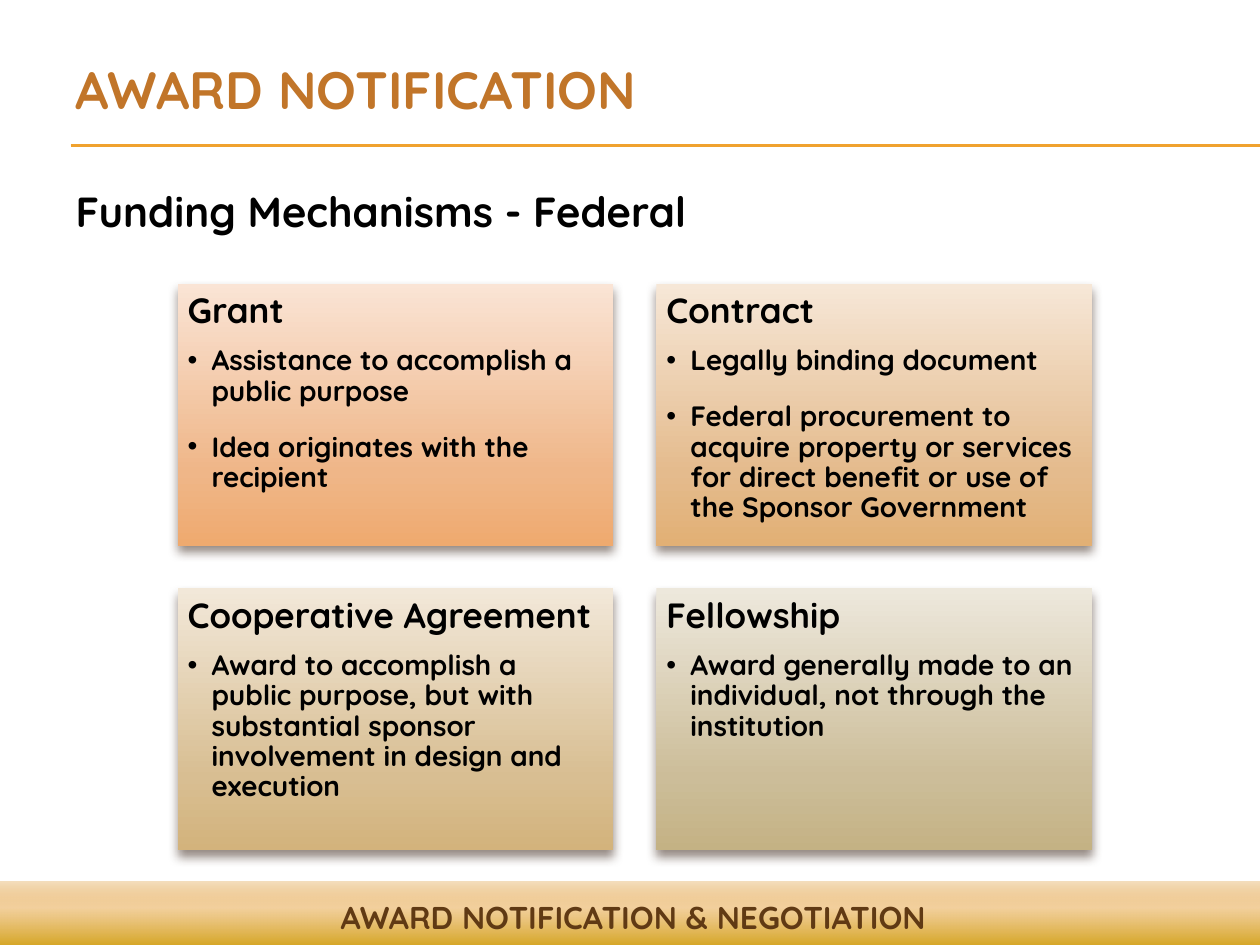
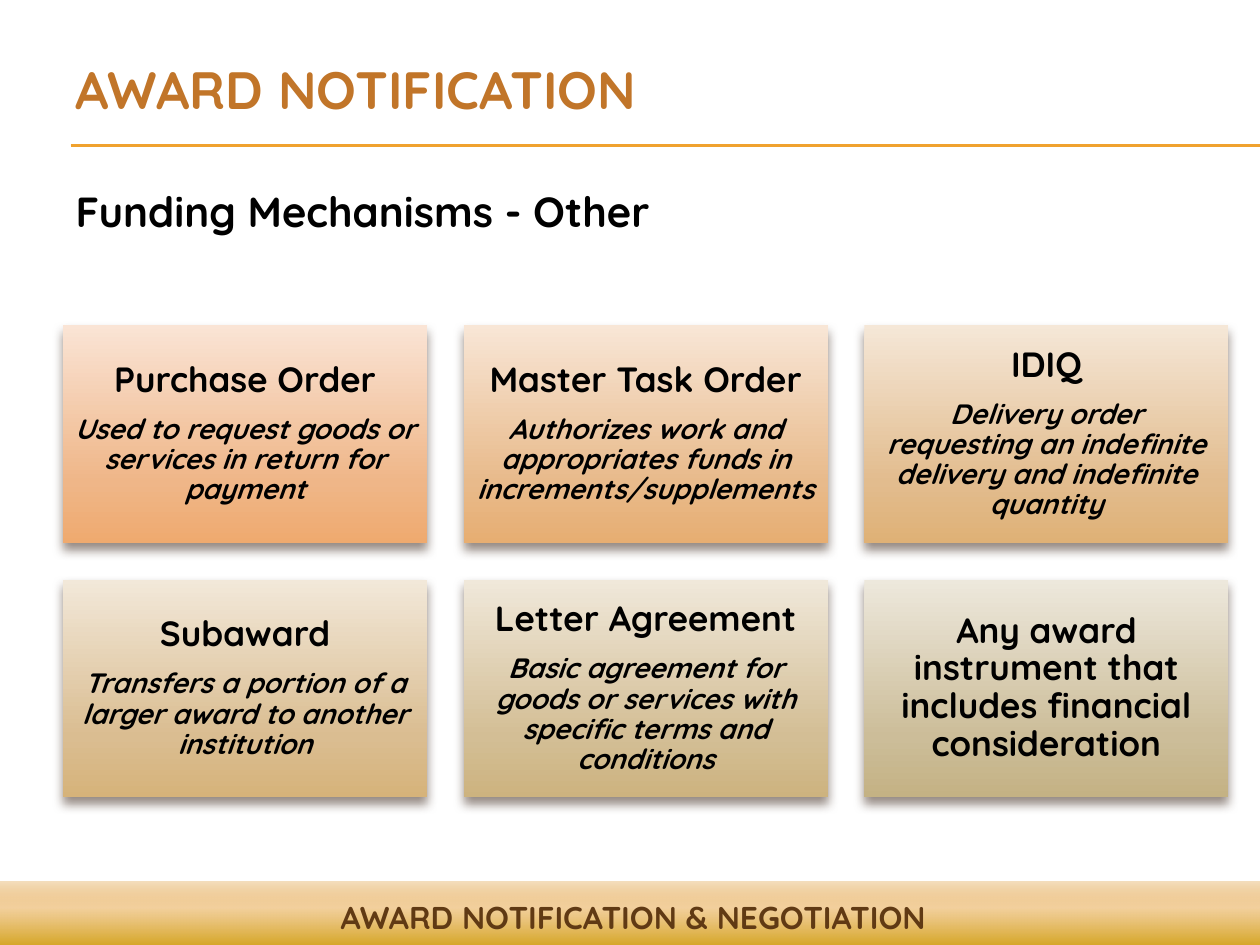
import pptx
import pptx.dml.color
import pptx.enum.shapes
import pptx.enum.text
import pptx.oxml.ns
import pptx.util
from lxml import etree

Inches = pptx.util.Inches
Pt = pptx.util.Pt
ALIGN = pptx.enum.text.PP_ALIGN
ANCHOR = pptx.enum.text.MSO_ANCHOR
AUTO_SIZE = pptx.enum.text.MSO_AUTO_SIZE
qn = pptx.oxml.ns.qn

COLORS = {
    "title": "C17529",
    "text": "000000",
    "footer": "603A14",
    "rule": "F0A22E",
    "shadow": "4E3B30",
    "band_bottom": "CC9900",
    "band_middle": "EFC17E",
    "band_top": "D68000",
}
CARD_TONES = {
    "peach": ("FAE4D5", "EFB688", "EFAA6F"),
    "apricot": ("F8E6D6", "E8BA8B", "E7AE72"),
    "amber": ("F6E7D7", "E4BB8D", "E2B075"),
    "honey": ("F5E7D7", "E2BC8E", "DFB176"),
    "wheat": ("F2E8D9", "D8BE92", "D3B37C"),
    "straw": ("F2E8D9", "DABD91", "D6B37A"),
    "sand": ("F0E8DA", "D3BE95", "CDB37F"),
    "olive": ("EDE8DC", "CCBD99", "C4B284"),
}
FONTS = {
    "title": {"size": Pt(30), "bold": True},
    "subtitle": {"size": Pt(24), "bold": True},
    "footer": {"size": Pt(18), "bold": True},
    "heading": {"size": Pt(20), "bold": True},
    "bullet": {"size": Pt(16), "bold": True},
    "summary": {"size": Pt(16), "bold": True, "italic": True},
}
HEADING_GAP = Pt(8.75)
BULLET_GAP = Pt(14.8)

FEDERAL_CARDS = [
    ("peach", "Grant", ["Assistance to accomplish a public purpose",
                        "Idea originates with the recipient"]),
    ("amber", "Contract", ["Legally binding document",
                           "Federal procurement to acquire property or services for "
                           "direct benefit or use of the Sponsor Government"]),
    ("wheat", "Cooperative Agreement", ["Award to accomplish a public purpose, but with substantial "
                                        "sponsor involvement in design and execution"]),
    ("olive", "Fellowship", ["Award generally made to an individual, not through the institution"]),
]
OTHER_CARDS = [
    ("peach", "Purchase Order", ["Used to request goods or services in return for payment"]),
    ("apricot", "Master Task Order", ["Authorizes work and appropriates funds in increments/supplements"]),
    ("honey", "IDIQ", ["Delivery order requesting an indefinite delivery and indefinite quantity"]),
    ("straw", "Subaward", ["Transfers a portion of a larger award to another institution"]),
    ("sand", "Letter Agreement", ["Basic agreement for goods or services with specific terms and conditions"]),
    ("olive", "Any award instrument that includes financial consideration", []),
]


def set_all(target, values):
    for name, value in values.items():
        setattr(target, name, value)


def add_color(parent, color, alpha=100):
    node = etree.SubElement(parent, qn("a:srgbClr"), val=color)
    if alpha < 100:
        etree.SubElement(node, qn("a:alpha"), val=str(alpha * 1000))


class SlideBuilder:
    font_name = "Quicksand"

    def __init__(self, deck):
        self.deck = deck
        self.page = None

    def start_page(self, title, subtitle, footer):
        self.page = self.deck.slides.add_slide(self.deck.slide_layouts[1])
        self.rules()
        self.band()
        self.footer(footer)
        self.placeholder(0, title, "title", (0.5, 0.3, 8.83, 0.7),
                         {"vertical_anchor": ANCHOR.BOTTOM, "auto_size": AUTO_SIZE.NONE})
        self.placeholder(1, subtitle, "subtitle", (0.5, 1.42, 9.25, 0.5),
                         {"vertical_anchor": ANCHOR.TOP, "auto_size": AUTO_SIZE.SHAPE_TO_FIT_TEXT})

    def add_text(self, para, text, style, color="text", **layout):
        set_all(para, layout)
        span = para.add_run()
        span.text = text
        set_all(span.font, {"name": self.font_name, **FONTS[style]})
        span.font.color.rgb = pptx.dml.color.RGBColor.from_string(COLORS[color])

    def bullet(self, para, indent, char=None):
        properties = para._p.get_or_add_pPr()
        properties.set("marL", str(Inches(indent)))
        properties.set("indent", str(-Inches(indent)))
        if char:
            etree.SubElement(properties, qn("a:buFont"), typeface="Arial")
            etree.SubElement(properties, qn("a:buChar"), char=char)
        else:
            etree.SubElement(properties, qn("a:buNone"))

    def placeholder(self, index, text, style, place, frame_format):
        box = self.page.placeholders[index]
        set_all(box, dict(zip(("left", "top", "width", "height"), map(Inches, place))))
        set_all(box.text_frame, {"word_wrap": True, **frame_format})
        para = box.text_frame.paragraphs[0]
        self.bullet(para, 0)
        self.add_text(para, text, style, "title" if style == "title" else "text",
                      alignment=ALIGN.LEFT, space_before=Pt(0))

    def rules(self):
        for y in (1.15, 1.16):
            rule = self.page.shapes.add_connector(
                pptx.enum.shapes.MSO_CONNECTOR.STRAIGHT,
                Inches(0.56), Inches(y), Inches(10), Inches(y))
            rule.line.color.rgb = pptx.dml.color.RGBColor.from_string(COLORS["rule"])
            rule.line.width = Pt(0.75)
            etree.SubElement(rule.element.spPr, qn("a:effectLst"))

    def gradient_box(self, place, stops, angle):
        box = self.page.shapes.add_shape(
            pptx.enum.shapes.MSO_SHAPE.RECTANGLE, *map(Inches, place))
        box.fill.gradient()
        box.fill.gradient_angle = angle
        stop_list = box.element.spPr.find(".//" + qn("a:gsLst"))
        for old_stop in list(stop_list):
            stop_list.remove(old_stop)
        for position, color, alpha in stops:
            stop = etree.SubElement(stop_list, qn("a:gs"), pos=str(position * 1000))
            add_color(stop, color, alpha)
        box.line.fill.background()
        box.shadow.inherit = False
        return box

    def band(self):
        stops = [(0, COLORS["band_bottom"], 100),
                 (65, COLORS["band_middle"], 75),
                 (100, COLORS["band_top"], 25)]
        self.gradient_box((-0.01, 7, 10.03, 0.58), stops, 90)

    def footer(self, text):
        box = self.page.shapes.add_textbox(*map(Inches, (0.15, 7.08, 9.75, 0.4)))
        set_all(box.text_frame, {"word_wrap": True, "auto_size": AUTO_SIZE.SHAPE_TO_FIT_TEXT})
        self.add_text(box.text_frame.paragraphs[0], text, "footer", "footer", alignment=ALIGN.CENTER)

    def drop_shadow(self, box):
        effects = box.element.spPr.find(qn("a:effectLst"))
        shadow = etree.SubElement(effects, qn("a:outerShdw"), blurRad=str(Pt(6)),
                                  dist=str(Pt(4)), dir="5400000", rotWithShape="0")
        add_color(shadow, COLORS["shadow"], 60)

    def card(self, place, tone, heading, details, bulleted):
        stops = [(position, color, 100)
                 for position, color in zip((0, 72, 100), CARD_TONES[tone])]
        box = self.gradient_box(place, stops, 270)
        self.drop_shadow(box)
        frame = box.text_frame
        margins = ("margin_left", "margin_top", "margin_right", "margin_bottom")
        set_all(frame, dict.fromkeys(margins, Inches(0.08)))
        set_all(frame, {"word_wrap": True,
                        "vertical_anchor": ANCHOR.TOP if bulleted else ANCHOR.MIDDLE})
        layout = {"alignment": ALIGN.LEFT if bulleted else ALIGN.CENTER, "line_spacing": 0.9}
        self.add_text(frame.paragraphs[0], heading, "heading",
                      space_after=HEADING_GAP if details else Pt(0), **layout)
        for number, detail in enumerate(details, 1):
            para = frame.add_paragraph()
            if bulleted:
                self.bullet(para, 0.19, "•")
            self.add_text(para, detail, "bullet" if bulleted else "summary",
                          space_after=BULLET_GAP if number < len(details) else Pt(0), **layout)

    def card_grid(self, cards, columns, left, top, width, height, gap, bulleted):
        for index, (tone, heading, details) in enumerate(cards):
            row, column = divmod(index, columns)
            place = (left + column * (width + gap), top + row * (height + gap), width, height)
            self.card(place, tone, heading, details, bulleted)


def main():
    deck = pptx.Presentation()
    deck.slide_width = Inches(10)
    deck.slide_height = Inches(7.5)
    builder = SlideBuilder(deck)
    title, footer = "AWARD NOTIFICATION", "AWARD NOTIFICATION & NEGOTIATION"

    builder.start_page(title, "Funding Mechanisms - Federal", footer)
    builder.card_grid(FEDERAL_CARDS, columns=2, left=1.41, top=2.25,
                      width=3.46, height=2.08, gap=0.34, bulleted=True)

    builder.start_page(title, "Funding Mechanisms - Other", footer)
    builder.card_grid(OTHER_CARDS, columns=3, left=0.5, top=2.58,
                      width=2.89, height=1.73, gap=0.29, bulleted=False)

    deck.save("out.pptx")


if __name__ == "__main__":
    main()
